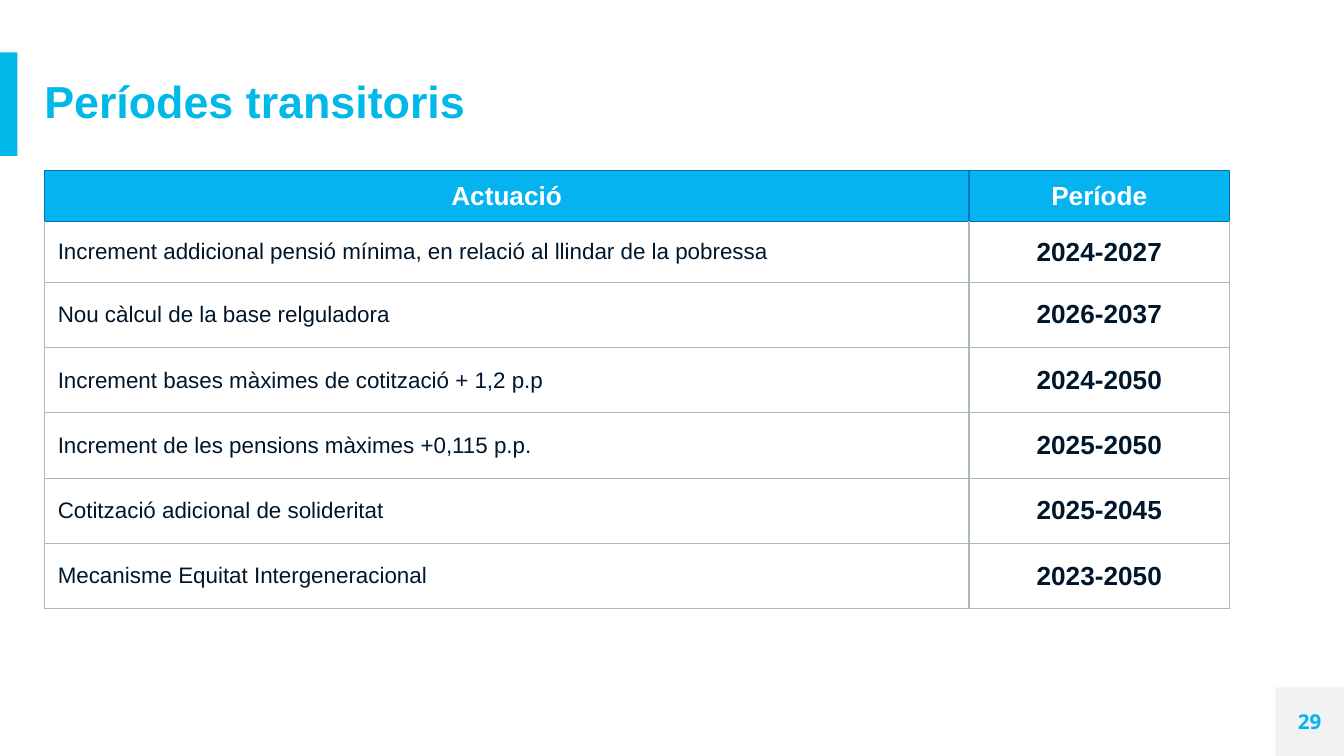
from pptx import Presentation
from pptx.dml.color import RGBColor
from pptx.enum import shapes, text
from pptx.oxml.ns import qn
from pptx.util import Inches, Pt
from lxml import etree

TITLE = "Períodes transitoris"
PAGE = "29"
HEADER = ("Actuació", "Període")
ROWS = [
    ("Increment addicional pensió mínima, en relació al llindar de la pobressa", "2024-2027"),
    ("Nou càlcul de la base relguladora", "2026-2037"),
    ("Increment bases màximes de cotització + 1,2 p.p", "2024-2050"),
    ("Increment de les pensions màximes +0,115 p.p.", "2025-2050"),
    ("Cotització adicional de solideritat", "2025-2045"),
    ("Mecanisme Equitat Intergeneracional", "2023-2050"),
]
THEME = {
    "font": "Arial", "page_font": "Open Sans",
    "accent": "00B9E9", "header": "05B3F1", "header_line": "0073BB",
    "grid": "ABB8C0", "ink": "00162A", "white": "FFFFFF", "page_box": "F0F2F3",
    "title_size": 24, "strong_size": 14, "body_size": 12, "page_size": 11,
    "line": 0.75,
}
SLIDE_W = 10
SLIDE_H = SLIDE_W * 9 / 16
PAGE_SIDE = 0.51
TABLE_H = 3.26
COL_WIDTHS = (6.88, 1.94)
TOP_ROWS = [0.38, 0.45]
EVEN_ROWS = len(ROWS) - 1
ROW_HEIGHTS = TOP_ROWS + [(TABLE_H - sum(TOP_ROWS)) / EVEN_ROWS] * EVEN_ROWS
TITLE_BOX = (0.33, 0.39, 9.27, 0.77)
ACCENT_BOX = (-0.01, 0.39, 0.14, 0.77)
PAGE_BOX = (SLIDE_W - PAGE_SIDE, SLIDE_H - PAGE_SIDE, PAGE_SIDE, PAGE_SIDE)
TABLE_BOX = (0.33, 1.27, sum(COL_WIDTHS), TABLE_H)


def color(name):
    return RGBColor.from_string(THEME[name])


def write(tf, words, size, ink, bold=True, font="font", align=text.PP_ALIGN.LEFT):
    tf.text = words
    p = tf.paragraphs[0]
    p.alignment = align
    f = p.runs[0].font
    f.name, f.size, f.bold = THEME[font], Pt(THEME[size]), bold
    f.color.rgb = color(ink)
    return p


def add_box(slide, box, fill):
    sp = slide.shapes.add_shape(shapes.MSO_SHAPE.RECTANGLE, *map(Inches, box))
    sp.shadow.inherit = False
    sp.fill.solid()
    sp.fill.fore_color.rgb = color(fill)
    sp.line.fill.background()


def add_text(slide, box, *args, **kwargs):
    tf = slide.shapes.add_textbox(*map(Inches, box)).text_frame
    tf.word_wrap = True
    tf.vertical_anchor = text.MSO_ANCHOR.MIDDLE
    tf.margin_left = tf.margin_right = tf.margin_top = tf.margin_bottom = 0
    return write(tf, *args, **kwargs)


def set_borders(cell, top, other):
    tcPr = cell._tc.get_or_add_tcPr()
    for side in "LRTB":
        ln = etree.SubElement(tcPr, qn(f"a:ln{side}"), w=str(Pt(THEME["line"])))
        fill = etree.SubElement(ln, qn("a:solidFill"))
        etree.SubElement(fill, qn("a:srgbClr"), val=THEME[top if side == "T" else other])


def add_periods(slide):
    frame = slide.shapes.add_table(len(ROW_HEIGHTS), len(COL_WIDTHS), *map(Inches, TABLE_BOX))
    table = frame.table
    table.horz_banding = False
    for col, width in zip(table.columns, COL_WIDTHS):
        col.width = Inches(width)
    for i, (row, height, values) in enumerate(zip(table.rows, ROW_HEIGHTS, [HEADER] + ROWS)):
        row.height = Inches(height)
        head = i == 0
        for j, (cell, value) in enumerate(zip(row.cells, values)):
            strong = head or j == 1
            cell.margin_left = cell.margin_right = Inches(0.1)
            cell.margin_top = cell.margin_bottom = Inches(0.07)
            cell.vertical_anchor = text.MSO_ANCHOR.MIDDLE
            set_borders(cell, "header_line" if i < 2 else "grid", "header_line" if head else "grid")
            if head:
                cell.fill.solid()
                cell.fill.fore_color.rgb = color("header")
            else:
                cell.fill.background()
            write(cell.text_frame, value, "strong_size" if strong else "body_size",
                  "white" if head else "ink", bold=strong,
                  align=text.PP_ALIGN.CENTER if strong else text.PP_ALIGN.LEFT)


def main():
    prs = Presentation()
    prs.slide_width, prs.slide_height = Inches(SLIDE_W), Inches(SLIDE_H)
    slide = prs.slides.add_slide(prs.slide_layouts[6])
    add_box(slide, PAGE_BOX, "page_box")
    add_box(slide, ACCENT_BOX, "accent")
    add_text(slide, TITLE_BOX, TITLE, "title_size", "accent").line_spacing = 0.9
    add_periods(slide)
    add_text(slide, PAGE_BOX, PAGE, "page_size", "header", font="page_font",
             align=text.PP_ALIGN.CENTER)
    prs.save("out.pptx")


if __name__ == "__main__":
    main()
